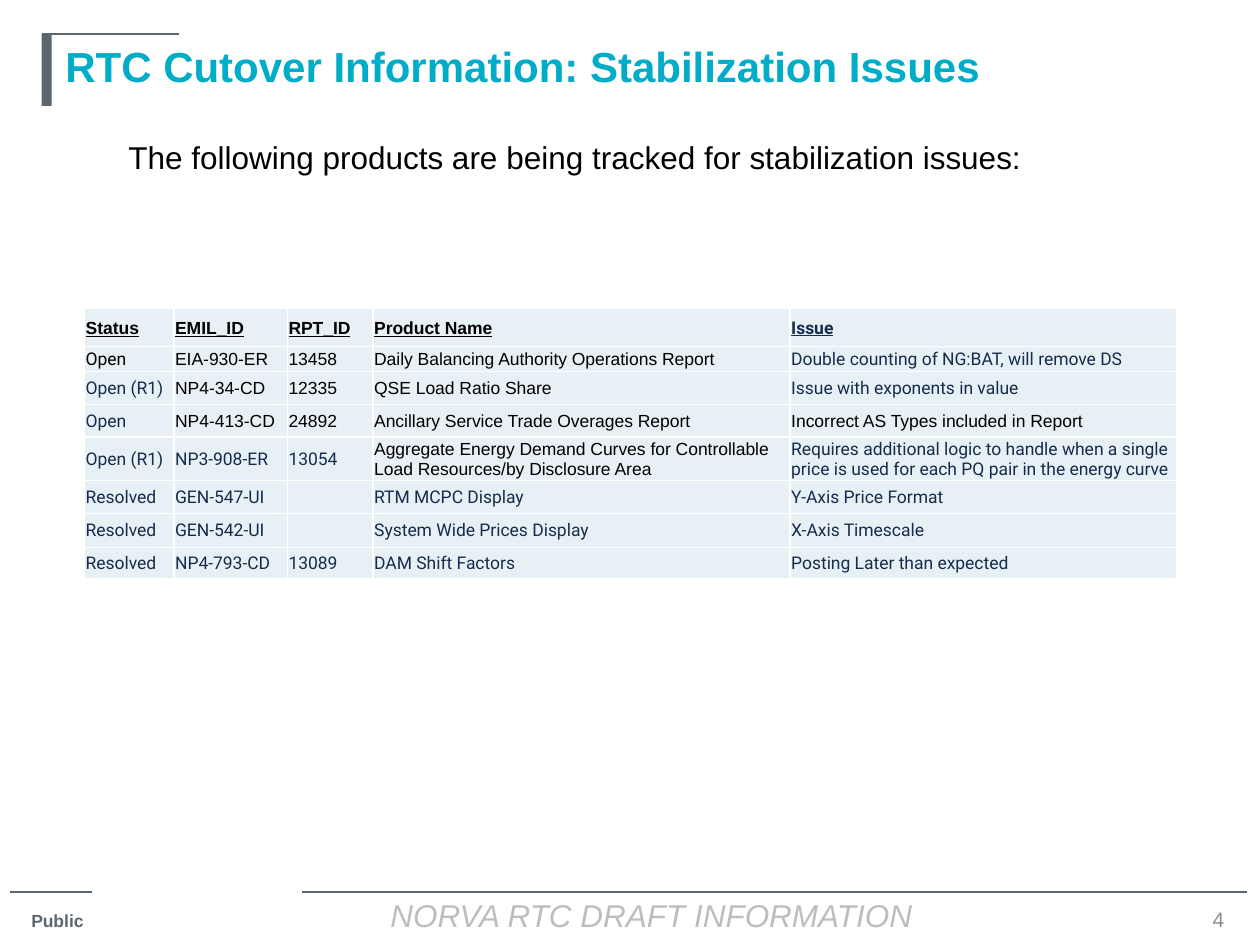
from dataclasses import dataclass
from typing import Optional

from lxml.etree import SubElement
from pptx import Presentation
from pptx.dml.color import RGBColor
from pptx.enum.shapes import MSO_CONNECTOR, MSO_SHAPE
from pptx.enum.text import MSO_ANCHOR, PP_ALIGN
from pptx.oxml.ns import qn
from pptx.util import Inches, Pt

COLORS = {
    "slate": "5B6770",
    "teal": "00ACC8",
    "black": "000000",
    "navy": "172B4D",
    "gray": "8C8C8C",
    "cell": "E7F1F5",
    "white": "FFFFFF",
}


@dataclass
class Rule:
    x1: float
    x2: float
    y: float


@dataclass
class Label:
    text: str
    box: tuple[float, float, float, float]
    size: int
    color: str
    bold: bool = False
    italic: bool = False
    align: PP_ALIGN = PP_ALIGN.LEFT
    anchor: MSO_ANCHOR = MSO_ANCHOR.TOP
    opacity: Optional[int] = None


@dataclass
class Row:
    height: float
    styles: str
    texts: tuple[str, ...]


RULES = [Rule(0.08, 0.73, 7.08), Rule(2.4, 9.9, 7.08), Rule(0.33, 1.42, 0.27)]

LABELS = [
    Label("Public", (0.15, 7.17, 0.67, 0.27), 10, "slate", bold=True),
    Label("NORVA RTC DRAFT INFORMATION", (3, 7.06, 5, 0.4), 18, "black",
          italic=True, opacity=25),
    Label("RTC Cutover Information: Stabilization Issues",
          (0.42, 0.27, 9.25, 0.78), 24, "teal", bold=True),
    Label("4", (9.42, 7.18, 0.5, 0.23), 12, "gray",
          align=PP_ALIGN.CENTER, anchor=MSO_ANCHOR.MIDDLE),
    Label("The following products are being tracked for stabilization issues:",
          (0.92, 1.05, 7.92, 0.4), 18, "black"),
]

CELL_STYLES = {"A": ("Arial", "black"), "K": ("Roboto", "black"), "R": ("Roboto", "navy")}
COLUMN_WIDTHS = [0.71, 0.9, 0.68, 3.31, 3.07]
ROWS = [
    Row(0.3, "AAAAR", ("Status", "EMIL_ID", "RPT_ID", "Product Name", "Issue")),
    Row(0.2, "KAAAR", ("Open", "EIA-930-ER", "13458",
                       "Daily Balancing Authority Operations Report",
                       "Double counting of NG:BAT, will remove DS")),
    Row(0.26, "RAAAR", ("Open (R1)", "NP4-34-CD", "12335", "QSE Load Ratio Share",
                        "Issue with exponents in value")),
    Row(0.26, "RAAAA", ("Open", "NP4-413-CD", "24892",
                        "Ancillary Service Trade Overages Report",
                        "Incorrect AS Types included in Report")),
    Row(0.26, "RRRAR", ("Open (R1)", "NP3-908-ER", "13054",
                        "Aggregate Energy Demand Curves for Controllable "
                        "Load Resources/by Disclosure Area",
                        "Requires additional logic to handle when a single "
                        "price is used for each PQ pair in the energy curve")),
    Row(0.26, "RRRRR", ("Resolved", "GEN-547-UI", "", "RTM MCPC Display",
                        "Y-Axis Price Format")),
    Row(0.27, "RRRRR", ("Resolved", "GEN-542-UI", "", "System Wide Prices Display",
                        "X-Axis Timescale")),
    Row(0.25, "RRRRR", ("Resolved", "NP4-793-CD", "13089", "DAM Shift Factors",
                        "Posting Later than expected")),
]


def rgb(name: str) -> RGBColor:
    """Return the named colour."""
    return RGBColor.from_string(COLORS[name])


def add_rule(s, rule: Rule) -> None:
    """Draw a thin horizontal line."""
    y = Inches(rule.y)
    c = s.shapes.add_connector(MSO_CONNECTOR.STRAIGHT, Inches(rule.x1), y, Inches(rule.x2), y)
    c.line.color.rgb = rgb("slate")
    c.line.width = Pt(0.75)
    SubElement(c._element.spPr, qn("a:effectLst"))


def add_bar(s) -> None:
    """Draw the vertical bar beside the title."""
    sp = s.shapes.add_shape(MSO_SHAPE.RECTANGLE, Inches(0.33), Inches(0.27),
                            Inches(0.08), Inches(0.57))
    sp.shadow.inherit = False
    sp.fill.solid()
    sp.fill.fore_color.rgb = rgb("slate")
    sp.line.fill.background()


def add_label(s, label: Label) -> None:
    """Add a single-paragraph text box."""
    tf = s.shapes.add_textbox(*map(Inches, label.box)).text_frame
    tf.word_wrap = True
    tf.vertical_anchor = label.anchor
    tf.text = label.text
    p = tf.paragraphs[0]
    p.alignment = label.align
    r = p.runs[0]
    r.font.name, r.font.size = "Arial", Pt(label.size)
    r.font.bold, r.font.italic = label.bold, label.italic
    r.font.color.rgb = rgb(label.color)
    if label.opacity is not None:
        clr = r._r.rPr.find(".//" + qn("a:srgbClr"))
        SubElement(clr, qn("a:alpha"), val=str(label.opacity * 1000))


def add_borders(cell) -> None:
    """Give a cell white borders on all four sides."""
    tcPr = cell._tc.get_or_add_tcPr()
    for i, side in enumerate(("lnL", "lnR", "lnT", "lnB")):
        ln = SubElement(tcPr, qn(f"a:{side}"), w=str(Pt(1)))
        fill = SubElement(ln, qn("a:solidFill"))
        SubElement(fill, qn("a:srgbClr"), val=COLORS["white"])
        tcPr.insert(i, ln)


def fill_cell(cell, text: str, style: str, header: bool) -> None:
    """Write and format one table cell."""
    cell.margin_left = cell.margin_right = cell.margin_top = Inches(0.01)
    cell.margin_bottom = 0
    cell.vertical_anchor = MSO_ANCHOR.MIDDLE
    cell.fill.solid()
    cell.fill.fore_color.rgb = rgb("cell")
    add_borders(cell)
    p = cell.text_frame.paragraphs[0]
    if not text:
        SubElement(p._p, qn("a:endParaRPr"), sz="1000")
        return
    p.text = text
    font = p.runs[0].font
    font.name, color = CELL_STYLES[style]
    font.color.rgb = rgb(color)
    font.size = Pt(10)
    font.bold = font.underline = header


def add_issue_table(s) -> None:
    """Add the table of tracked products."""
    tbl = s.shapes.add_table(len(ROWS), len(COLUMN_WIDTHS), Inches(0.67), Inches(2.45),
                             Inches(sum(COLUMN_WIDTHS)),
                             Inches(sum(row.height for row in ROWS))).table
    tbl.first_row = tbl.horz_banding = False
    for col, width in zip(tbl.columns, COLUMN_WIDTHS):
        col.width = Inches(width)
    for i, row in enumerate(ROWS):
        tbl.rows[i].height = Inches(row.height)
        for j, (text, style) in enumerate(zip(row.texts, row.styles)):
            fill_cell(tbl.cell(i, j), text, style, i == 0)


def main() -> None:
    """Build and save the slide."""
    prs = Presentation()
    prs.slide_width, prs.slide_height = Inches(10), Inches(7.5)
    s = prs.slides.add_slide(prs.slide_layouts[6])
    for rule in RULES:
        add_rule(s, rule)
    add_bar(s)
    for label in LABELS:
        add_label(s, label)
    add_issue_table(s)
    prs.save("out.pptx")


if __name__ == "__main__":
    main()
